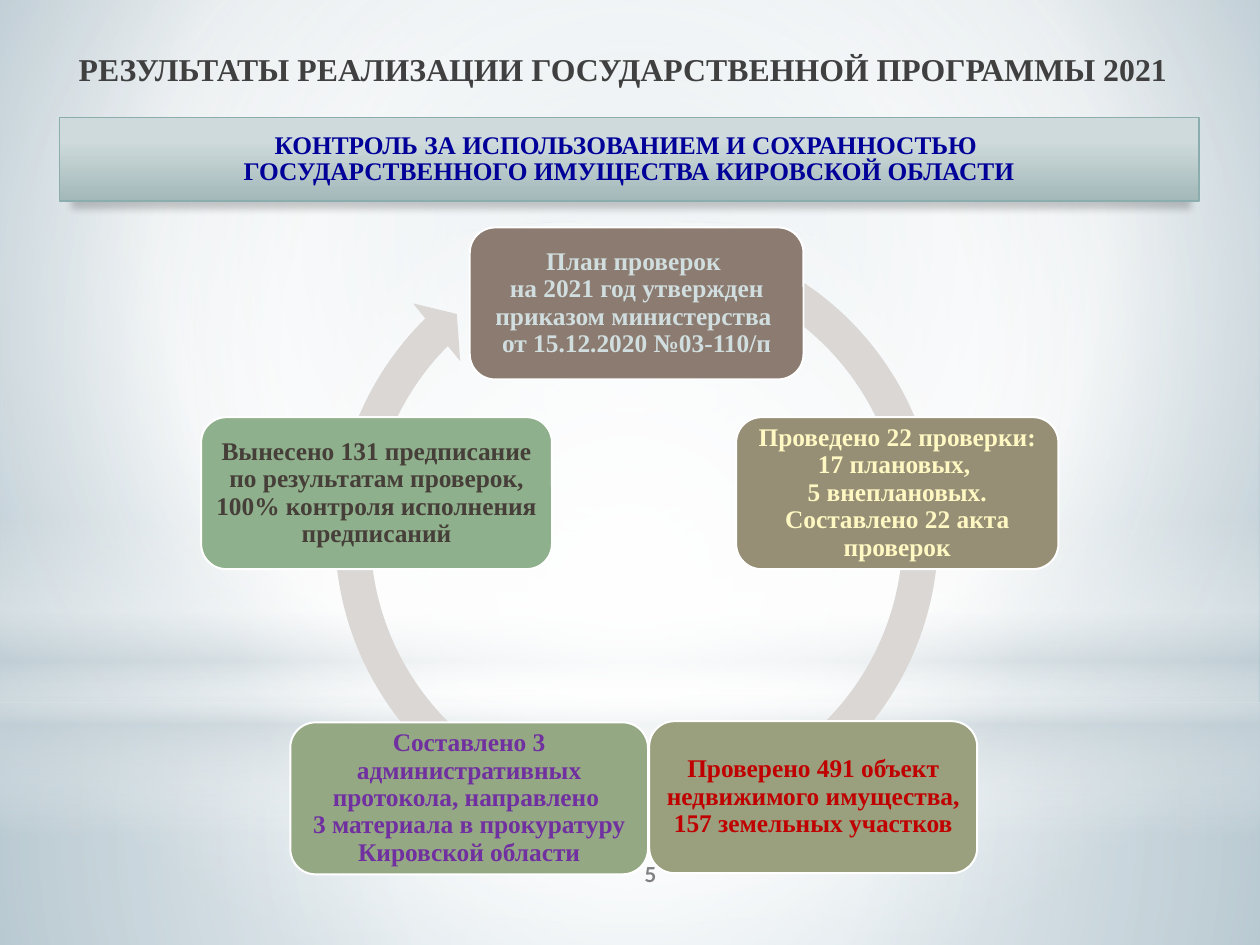
from lxml import etree
from pptx import Presentation
from pptx.dml.color import RGBColor
from pptx.enum.shapes import MSO_SHAPE
from pptx.enum.text import MSO_ANCHOR, PP_ALIGN
from pptx.oxml.ns import qn
from pptx.util import Inches, Pt

RECT, OVAL = MSO_SHAPE.RECTANGLE, MSO_SHAPE.OVAL
ROUND, ARROW = MSO_SHAPE.ROUNDED_RECTANGLE, MSO_SHAPE.CIRCULAR_ARROW
TOP, MIDDLE = MSO_ANCHOR.TOP, MSO_ANCHOR.MIDDLE
CENTER = PP_ALIGN.CENTER

WHITE = RGBColor(0xFF, 0xFF, 0xFF)
NAVY = RGBColor(0x00, 0x00, 0x99)
DARK = RGBColor(0x40, 0x40, 0x40)
GRAY = RGBColor(0x80, 0x80, 0x80)
RING = RGBColor(0xDA, 0xD7, 0xD5)
EDGE = RGBColor(0x8C, 0xAD, 0xAE)
BLACK = RGBColor(0x00, 0x00, 0x00)
SKY = RGBColor(0xB8, 0xCA, 0xD3)
STEEL = RGBColor(0x8F, 0xAE, 0xBD)
MIST = RGBColor(0xC5, 0xD1, 0xD7)
PALE = RGBColor(0xCE, 0xDA, 0xDB)
TEAL = RGBColor(0xA3, 0xB8, 0xB9)
SERIF = "Times New Roman"


def shade(fill, root, stops, focus=None):
    fill.gradient()
    grad = next(root.iter(qn("a:gradFill")))
    grad.clear()
    items = etree.SubElement(grad, qn("a:gsLst"))
    for pos, color, alpha in stops:
        stop = etree.SubElement(items, qn("a:gs"), pos=str(pos * 1000))
        tint = etree.SubElement(stop, qn("a:srgbClr"), val=str(color))
        if alpha < 100:
            etree.SubElement(tint, qn("a:alpha"), val=str(alpha * 1000))
    if focus:
        way = etree.SubElement(grad, qn("a:path"), path="circle")
        sides = {k: str(v * 1000) for k, v in zip("ltrb", focus)}
        etree.SubElement(way, qn("a:fillToRect"), **sides)
    else:
        etree.SubElement(grad, qn("a:lin"), ang="5400000", scaled="0")


def write(shape, lines, size, color, font=SERIF, pad=(0.11, 0.06), anchor=MIDDLE, space=1.0):
    frame = shape.text_frame
    frame.word_wrap = True
    frame.vertical_anchor = anchor
    frame.margin_left = frame.margin_right = Inches(pad[0])
    frame.margin_top = frame.margin_bottom = Inches(pad[1])
    for i, line in enumerate(lines):
        para = frame.add_paragraph() if i else frame.paragraphs[0]
        para.alignment = CENTER
        para.line_spacing = space
        run = para.add_run()
        run.text = line
        run.font.name = font
        run.font.size = Pt(size)
        run.font.bold = True
        run.font.color.rgb = color


deck = Presentation()
deck.slide_width, deck.slide_height = Inches(28 / 2.54), Inches(21 / 2.54)
slide = deck.slides.add_slide(deck.slide_layouts[6])
shapes = slide.shapes

back = slide.background.fill
shade(back, slide._element, [(0, SKY, 100), (60, WHITE, 100), (100, STEEL, 100)],
      (20, 10, 20, 60))

MID = (50, 50, 50, 50)
glows = [
    (RECT, 6.15, 2.11, [(0, WHITE, 91), (37, WHITE, 76), (100, MIST, 79)], MID),
    (RECT, 0, 6.15, [(0, WHITE, 89), (48, WHITE, 62), (100, MIST, 79)], MID),
    (RECT, 4.54, 2.76, [(0, WHITE, 0), (29, WHITE, 30), (45, MIST, 40),
                        (55, WHITE, 26), (65, MIST, 60), (100, WHITE, 0)], None),
    (OVAL, 1.93, 6.15, [(0, WHITE, 100), (56, WHITE, 0)], MID),
]
for kind, top, high, stops, focus in glows:
    glow = shapes.add_shape(kind, 0, Inches(top), deck.slide_width, Inches(high))
    glow.shadow.inherit = False
    glow.line.fill.background()
    shade(glow.fill, glow._element.spPr, stops, focus)

banner = shapes.add_shape(RECT, Inches(0.52), Inches(1.03), Inches(9.97), Inches(0.73))
shade(banner.fill, banner._element.spPr, [(28, PALE, 100), (100, TEAL, 100)])
banner.line.color.rgb = EDGE
banner.line.width = Pt(0.75)
banner.shadow.inherit = False
effect = banner._element.spPr.find(qn("a:effectLst"))
drop = etree.SubElement(effect, qn("a:outerShdw"), blurRad=str(Pt(5)), dist=str(Pt(4)),
                        dir="5400000", sx="98000", algn="b", rotWithShape="0")
tint = etree.SubElement(drop, qn("a:srgbClr"), val=str(BLACK))
etree.SubElement(tint, qn("a:alpha"), val="20000")
write(banner, ["КОНТРОЛЬ ЗА ИСПОЛЬЗОВАНИЕМ И СОХРАННОСТЬЮ ",
               "ГОСУДАРСТВЕННОГО ИМУЩЕСТВА КИРОВСКОЙ ОБЛАСТИ"],
      16, NAVY, pad=(0.12, 0.06), space=0.87)

title = shapes.add_textbox(Inches(0.52), Inches(0.38), Inches(9.86), Inches(0.67))
write(title, ["РЕЗУЛЬТАТЫ РЕАЛИЗАЦИИ ГОСУДАРСТВЕННОЙ ПРОГРАММЫ 2021"], 20, DARK, anchor=TOP)

ring = shapes.add_shape(ARROW, Inches(2.76), Inches(1.86), Inches(5.62), Inches(5.62))
for i, value in enumerate([0.055, 3.307, 135.125, 175.485, 0.058]):
    ring.adjustments[i] = value
ring.shadow.inherit = False
ring.fill.solid()
ring.fill.fore_color.rgb = RING
ring.line.fill.background()

cards = [
    (4.11, 1.99, 2.92, "8C7B70", "D1DEDF",
     ["План проверок ", "на 2021 год утвержден приказом министерства ",
      "от 15.12.2020 №03-110/п"]),
    (6.44, 3.65, 2.82, "968F76", "FFF8C2",
     ["Проведено 22 проверки: 17 плановых, ",
      "5 внеплановых. Составлено 22 акта проверок"]),
    (5.68, 6.31, 2.87, "9A9F7D", "C00000",
     ["Проверено 491 объект недвижимого имущества, 157 земельных участков"]),
    (2.54, 6.32, 3.13, "95A884", "7030A0",
     ["Составлено 3 административных протокола, направлено ",
      "3 материала в прокуратуру Кировской области"]),
    (1.76, 3.65, 3.07, "8FB08C", "463E38",
     ["Вынесено 131 предписание по результатам проверок, "
      "100% контроля исполнения предписаний"]),
]
for left, top, wide, paint, ink, lines in cards:
    card = shapes.add_shape(ROUND, Inches(left), Inches(top), Inches(wide), Inches(1.33))
    card.shadow.inherit = False
    card.fill.solid()
    card.fill.fore_color.rgb = RGBColor.from_string(paint)
    card.line.color.rgb = WHITE
    card.line.width = Pt(1.25)
    write(card, lines, 16, RGBColor.from_string(ink), pad=(0.06, 0.07), space=0.9)

number = shapes.add_textbox(Inches(4.59), Inches(7.43), Inches(2.2), Inches(0.44))
write(number, ["5"], 13, GRAY, font="Lato")

deck.save("out.pptx")
